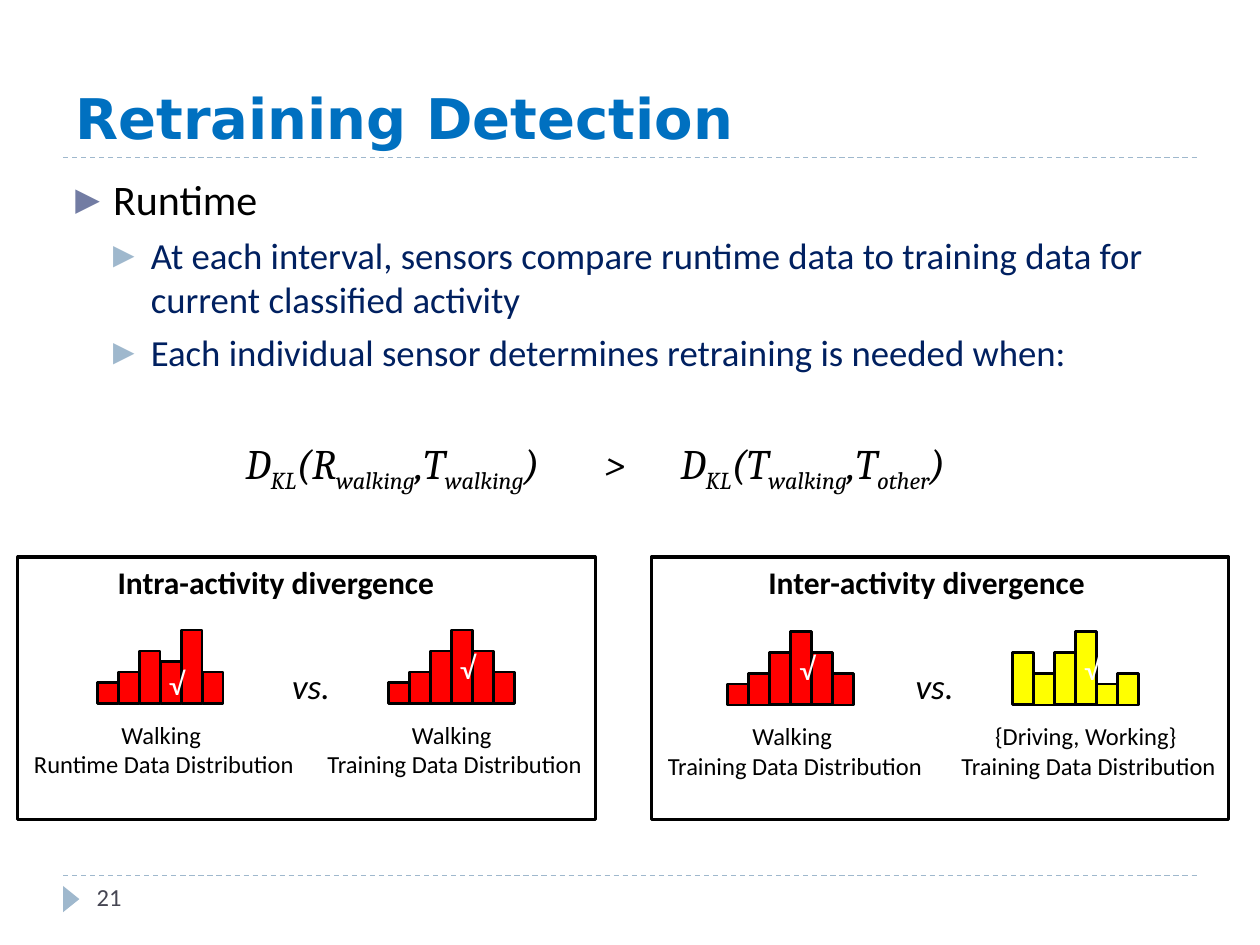
from lxml import etree
from pptx import Presentation
from pptx.dml.color import RGBColor as Rgb
from pptx.enum.dml import MSO_LINE as Dash
from pptx.enum.shapes import MSO_CONNECTOR as Conn, MSO_SHAPE as Kind
from pptx.enum.text import MSO_ANCHOR as Anchor, MSO_AUTO_SIZE as Fit, PP_ALIGN as Align
from pptx.oxml.ns import qn
from pptx.util import Cm, Pt

HUES = {
    "black": "000000", "white": "FFFFFF", "red": "FF0000", "yellow": "FFFF00",
    "title": "0070C0", "navy": "002060", "pale": "9FB8CD", "slate": "727CA3",
    "grey": "464653",
}
STEP = Cm(2.54) // 12  # height unit of the bars; each bar is two units wide


def hue(name):
    return Rgb.from_string(HUES[name])


def add_run(para, text, size, tint="black", face="Calibri", bold=False, ital=False, base=0):
    run = para.add_run()
    run.text = text
    font = run.font
    font.size, font.name, font.bold, font.italic = Pt(size), face, bold, ital
    font.color.rgb = hue(tint)
    if base:
        run._r.get_or_add_rPr().set("baseline", str(base * 1000))


def add_box(shapes, left, top, width, height, wrap=True, grow=False):
    """Add an empty text box and return its text frame."""
    frame = shapes.add_textbox(Cm(left), Cm(top), Cm(width), Cm(height)).text_frame
    frame.word_wrap = wrap
    if grow:
        frame.auto_size = Fit.SHAPE_TO_FIT_TEXT
    return frame


def add_shape(shapes, kind, left, top, width, height, fill=None, line=0):
    shape = shapes.add_shape(kind, left, top, width, height)
    shape.shadow.inherit = False
    if fill:
        shape.fill.solid()
        shape.fill.fore_color.rgb = hue(fill)
    else:
        shape.fill.background()
    if line:
        shape.line.color.rgb = hue("black")
        shape.line.width = Pt(line)
    else:
        shape.line.fill.background()
    return shape


def add_rule(shapes, top):
    rule = shapes.add_connector(Conn.STRAIGHT, Cm(1.27), Cm(top), Cm(24.13), Cm(top))
    rule.line.color.rgb = hue("pale")
    rule.line.width = Pt(0.75)
    rule.line.dash_style = Dash.DASH
    etree.SubElement(rule._element.spPr, qn("a:effectLst"))


def add_point(para, text, level, size, tint, mark):
    """Fill a paragraph as a bullet point with a triangle mark."""
    para.level = level
    para.space_before = Pt(6 - level)
    props = para._p.get_or_add_pPr()
    props.set("marL", str(Cm(0.76) * (level + 1)))
    props.set("indent", str(-Cm(0.76)))
    color = etree.SubElement(props, qn("a:buClr"))
    etree.SubElement(color, qn("a:srgbClr"), val=HUES[mark])
    etree.SubElement(props, qn("a:buSzPct"), val="76000")
    etree.SubElement(props, qn("a:buFont"), typeface="DejaVu Sans")
    etree.SubElement(props, qn("a:buChar"), char="▶")
    add_run(para, text, size, tint)


def add_body(shapes):
    frame = add_box(shapes, 1.27, 3.38, 22.86, 4.65)
    add_point(frame.paragraphs[0], "Runtime", 0, 24, "black", "slate")
    for text in (
        "At each interval, sensors compare runtime data to training data for "
        "current classified activity",
        "Each individual sensor determines retraining is needed when:",
    ):
        add_point(frame.add_paragraph(), text, 1, 21, "navy", "pale")


def add_rating(shapes):
    """Add the divergence formula, its parts set apart by tab stops."""
    frame = add_box(shapes, 3.78, 8.69, 16.64, 1.27)
    frame.margin_left = Cm(1.17)
    para = frame.paragraphs[0]
    tabs = etree.SubElement(para._p.get_or_add_pPr(), qn("a:tabLst"))
    for stop in (7.24, 8.77):
        etree.SubElement(tabs, qn("a:tab"), pos=str(Cm(stop)), algn="l")
    parts = ("D", "KL", "(R", "walking", ",T", "walking", ")\t>\tD", "KL",
             "(T", "walking", ",T", "other", ") ")
    for num, part in enumerate(parts):
        add_run(para, part, 24, face="Cambria", ital=True, base=-25 * (num % 2))


def add_bars(shapes, left, base, units, tick, fill):
    """Draw bars from right to left; the one numbered tick holds a root sign."""
    for num in reversed(range(len(units))):
        tall = units[num] * STEP
        bar = add_shape(shapes, Kind.RECTANGLE, Cm(left) + 2 * num * STEP,
                        Cm(base) - tall, 2 * STEP, tall, fill, 1.5)
        if num == tick:
            bar.text_frame.vertical_anchor = Anchor.MIDDLE
            para = bar.text_frame.paragraphs[0]
            para.alignment = Align.CENTER
            add_run(para, "√", 18, "white")


def add_label(shapes, left, top, width, lines):
    frame = add_box(shapes, left, top, width, 1.45, wrap=False, grow=True)
    for num, line in enumerate(lines):
        para = frame.add_paragraph() if num else frame.paragraphs[0]
        para.alignment = Align.CENTER
        add_run(para, line, 14)


def add_panel(slide, left, head, head_x, vs_x, base, charts):
    """Add a framed pair of bar groups with heading and labels."""
    shapes = slide.shapes.add_group_shape().shapes
    for bar_x, units, tick, fill, text_x, width, lines in charts:
        add_bars(shapes, bar_x, base, units, tick, fill)
        add_label(shapes, text_x, base + 0.21, width, lines)
    frame = add_box(shapes, vs_x, 13.28, 1.47, 1.11, grow=True)
    add_run(frame.paragraphs[0], "vs.", 20, ital=True)
    add_shape(shapes, Kind.RECTANGLE, Cm(left), Cm(11.23), Cm(11.64), Cm(5.29), line=1.75)
    frame = add_box(shapes, head_x, 11.23, 7.8, 1.03, wrap=False, grow=True)
    add_run(frame.paragraphs[0], head, 18, bold=True)


def main():
    deck = Presentation()
    deck.slide_width, deck.slide_height = Cm(25.4), Cm(19.05)
    slide = deck.slides.add_slide(deck.slide_layouts[6])
    shapes = slide.shapes

    for top in (17.65, 3.18):
        add_rule(shapes, top)
    mark = add_shape(shapes, Kind.ISOSCELES_TRIANGLE, Cm(1.17), Cm(17.96),
                     Cm(0.53), Cm(0.33), "pale")
    mark.rotation = 90
    title = add_box(shapes, 1.27, 0.43, 22.86, 2.74)
    title.vertical_anchor = Anchor.BOTTOM
    add_run(title.paragraphs[0], "Retraining Detection", 32, "title", "DejaVu Sans", bold=True)
    number = add_box(shapes, 1.7, 17.65, 5.51, 1.02)
    add_run(number.paragraphs[0], "21", 14, "grey")
    add_body(shapes)
    add_rating(shapes)

    hill = (2, 3, 5, 7, 5, 3)
    train = "Training Data Distribution"
    walk = ("Walking ", train)
    add_panel(slide, 0.36, "Intra-activity divergence", 2.12, 5.64, 14.18, (
        (1.96, (2, 3, 5, 4, 7, 3), 3, "red", 0.36, 5.89,
         ("Walking ", "Runtime Data Distribution")),
        (7.83, hill, 3, "red", 6.27, 5.79, walk),
    ))
    add_panel(slide, 13.13, "Inter-activity divergence", 15.24, 18.21, 14.21, (
        (14.67, hill, 3, "red", 13.13, 5.79, walk),
        (20.41, (5, 3, 5, 7, 2, 3), 3, "yellow", 19.05, 5.79,
         ("{Driving, Working} ", train)),
    ))
    deck.save("out.pptx")


if __name__ == "__main__":
    main()
